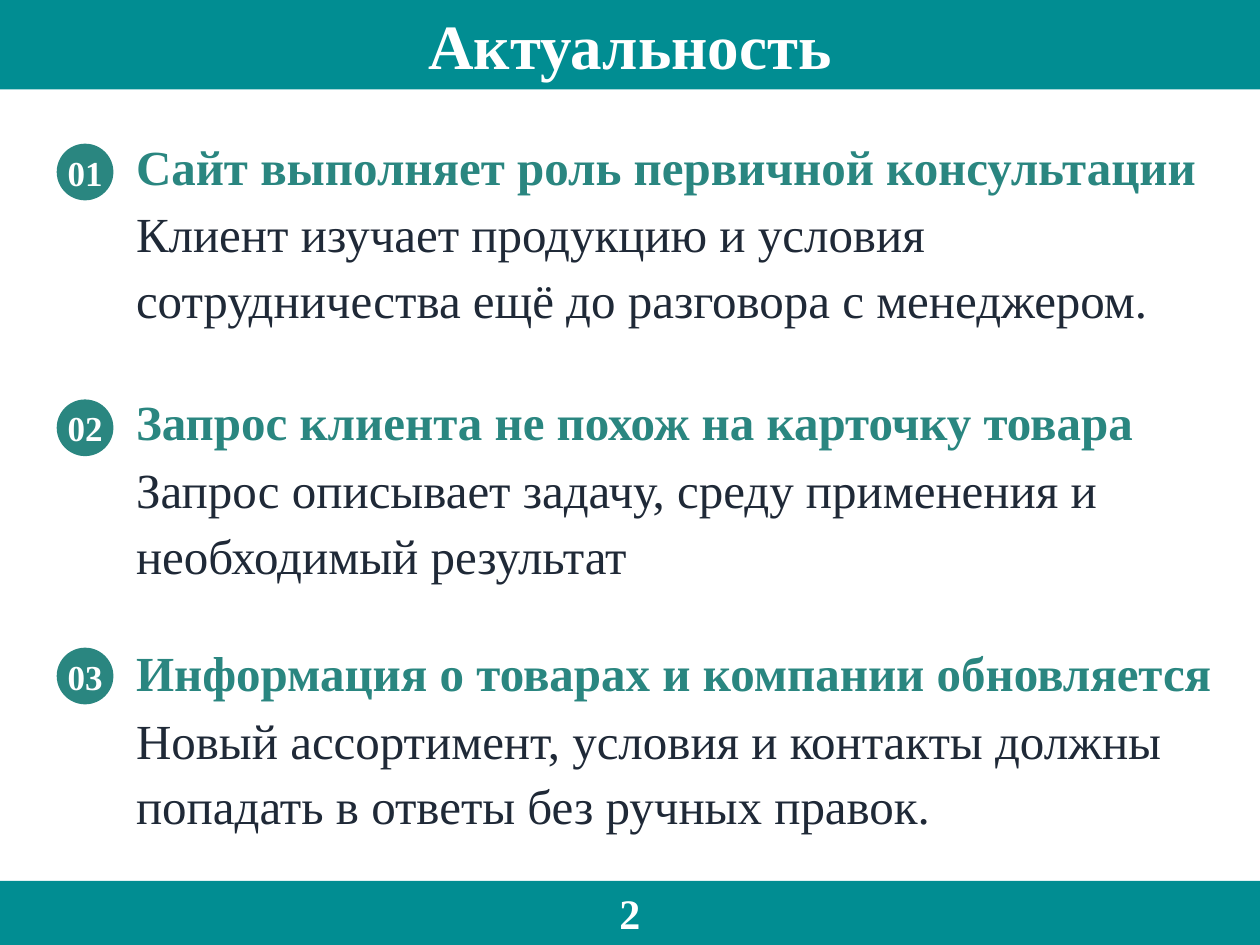
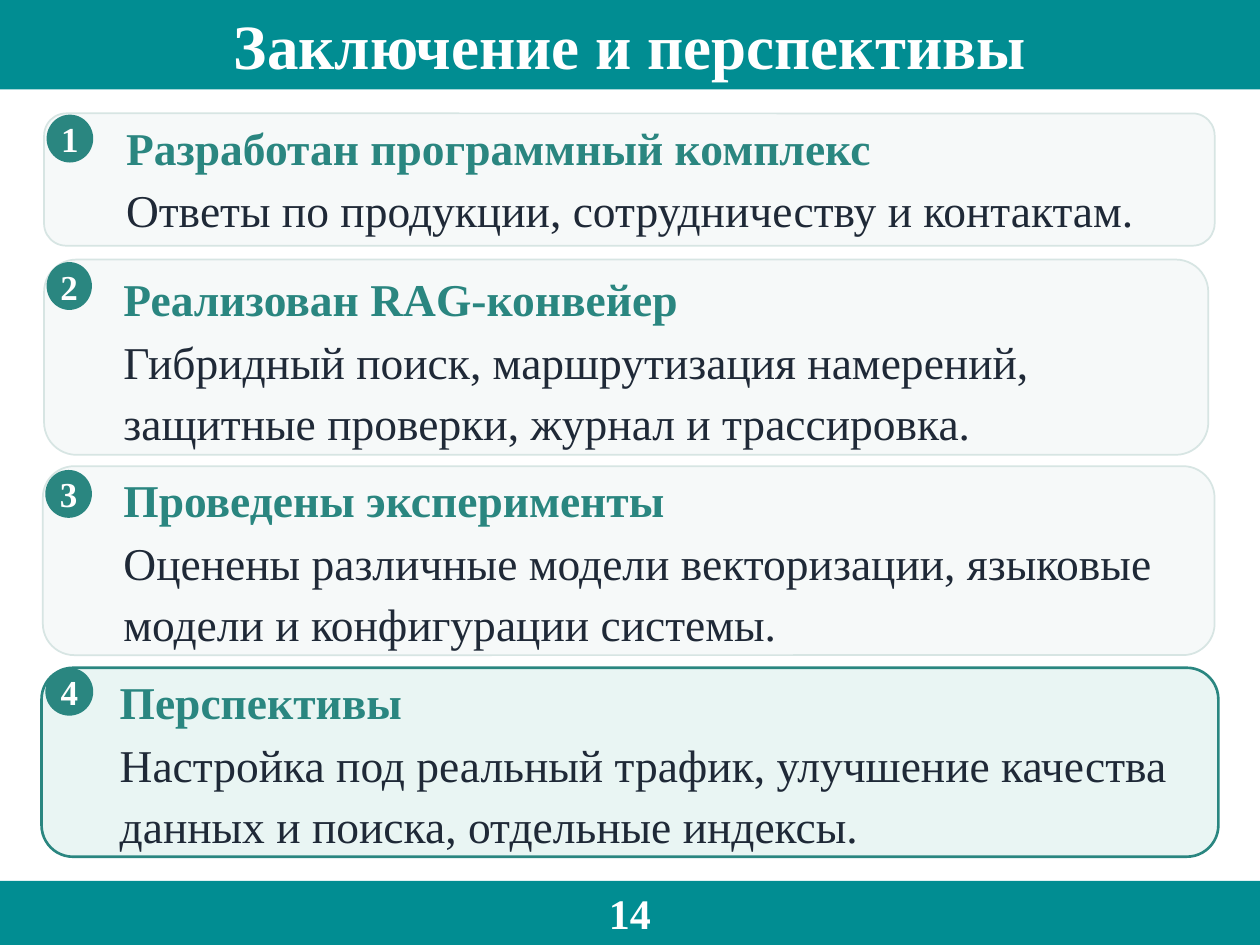
from dataclasses import dataclass
from typing import Optional

from pptx import Presentation
from pptx.dml.color import RGBColor
from pptx.enum.shapes import MSO_SHAPE as Preset
from pptx.enum.text import MSO_ANCHOR as Anchor, MSO_AUTO_SIZE as AutoSize, PP_ALIGN as Align
from pptx.util import Inches, Pt

FONT = "Times New Roman"
COLORS = {
    "band": "018D92",
    "accent": "2A8680",
    "body": "1F2937",
    "white": "FFFFFF",
    "card": "F6F9F9",
    "card_line": "D7E5E3",
    "outlook": "E9F5F3",
}
TITLE_ONLY = 5
PAGE_WIDTH, PAGE_HEIGHT = 10, 7.5
TITLE_HEIGHT, FOOTER_HEIGHT = 0.71, 0.51


@dataclass(frozen=True)
class Area:
    left: float
    top: float
    width: float
    height: float

    def lengths(self) -> tuple:
        return tuple(Inches(n) for n in (self.left, self.top, self.width, self.height))


@dataclass(frozen=True)
class Card:
    area: Area
    fill: str = "card"
    line: str = "card_line"
    weight: float = 1


@dataclass(frozen=True)
class Point:
    label: str
    heading: str
    body: str
    badge: Area
    text: Area
    card: Optional[Card] = None


# Shared drawing
def color(name: str) -> RGBColor:
    return RGBColor.from_string(COLORS[name])


def add_span(para, text: str, size: float, ink: str, bold: bool) -> None:
    span = para.add_run()
    span.text = text
    span.font.name = FONT
    span.font.size = Pt(size)
    span.font.bold = bold
    span.font.color.rgb = color(ink)


def remove_margins(frame) -> None:
    frame.margin_left = frame.margin_right = frame.margin_top = frame.margin_bottom = 0


def add_label(shape, text: str, size: float) -> None:
    frame = shape.text_frame
    frame.word_wrap = True
    frame.vertical_anchor = Anchor.MIDDLE
    para = frame.paragraphs[0]
    para.alignment = Align.CENTER
    add_span(para, text, size, "white", True)


def add_figure(page, preset, area: Area, fill: str):
    shape = page.shapes.add_shape(preset, *area.lengths())
    shape.shadow.inherit = False
    shape.fill.solid()
    shape.fill.fore_color.rgb = color(fill)
    shape.line.fill.background()
    return shape


def add_card(page, card: Card) -> None:
    shape = add_figure(page, Preset.ROUNDED_RECTANGLE, card.area, card.fill)
    shape.line.color.rgb = color(card.line)
    shape.line.width = Pt(card.weight)


def add_point(page, point: Point, size: float) -> None:
    if point.card:
        add_card(page, point.card)
    badge = add_figure(page, Preset.OVAL, point.badge, "accent")
    remove_margins(badge.text_frame)
    add_label(badge, point.label, 20)

    box = page.shapes.add_textbox(*point.text.lengths())
    frame = box.text_frame
    frame.word_wrap = True
    remove_margins(frame)
    heading = frame.paragraphs[0]
    heading.space_after = Pt(0.9)
    add_span(heading, point.heading, size, "accent", True)
    body = frame.add_paragraph()
    body.line_spacing = 1.12
    add_span(body, point.body, size, "body", False)


def add_page(deck, title: str, number: int, points: list[Point], size: float) -> None:
    page = deck.slides.add_slide(deck.slide_layouts[TITLE_ONLY])
    # Title band
    band = page.shapes.title
    band.left, band.top, band.width, band.height = Area(0, 0, PAGE_WIDTH, TITLE_HEIGHT).lengths()
    band.fill.solid()
    band.fill.fore_color.rgb = color("band")
    band.text_frame.auto_size = AutoSize.NONE
    add_label(band, title, 36)
    # Numbered points
    for point in points:
        add_point(page, point, size)
    # Footer band
    area = Area(0, PAGE_HEIGHT - FOOTER_HEIGHT, PAGE_WIDTH, FOOTER_HEIGHT)
    add_label(add_figure(page, Preset.RECTANGLE, area, "band"), str(number), 24)


# Slide content
def relevance_point(number: int, heading: str, body: str, badge_top: float,
                    text_top: float, width: float) -> Point:
    return Point(f"{number:02}", heading, body, Area(0.45, badge_top, 0.45, 0.45),
                 Area(1.08, text_top, width, 1.5))


RELEVANCE = [
    relevance_point(1, "Сайт выполняет роль первичной консультации",
                    "Клиент изучает продукцию и условия сотрудничества ещё до разговора с менеджером.",
                    1.14, 1.08, 8.57),
    relevance_point(2, "Запрос клиента не похож на карточку товара",
                    "Запрос описывает задачу, среду применения и необходимый результат",
                    3.17, 3.11, 7.95),
    relevance_point(3, "Информация о товарах и компании обновляется",
                    "Новый ассортимент, условия и контакты должны попадать в ответы без ручных правок.",
                    5.14, 5.1, 8.65),
]

CONCLUSIONS = [
    Point("1", "Разработан программный комплекс",
          "Ответы по продукции, сотрудничеству и контактам.",
          Area(0.37, 0.91, 0.37, 0.38), Area(1, 0.95, 8.59, 0.9),
          Card(Area(0.35, 0.9, 9.29, 1.05))),
    Point("2", "Реализован RAG-конвейер",
          "Гибридный поиск, маршрутизация намерений, защитные проверки, журнал и трассировка.",
          Area(0.37, 2.08, 0.36, 0.38), Area(0.98, 2.15, 8.6, 1.39),
          Card(Area(0.35, 2.06, 9.24, 1.55))),
    Point("3", "Проведены эксперименты",
          "Оценены различные модели векторизации, языковые модели и конфигурации системы.",
          Area(0.36, 3.73, 0.37, 0.38), Area(0.98, 3.75, 8.57, 1.39),
          Card(Area(0.34, 3.7, 9.3, 1.5))),
    Point("4", "Перспективы",
          "Настройка под реальный трафик, улучшение качества данных и поиска, отдельные индексы.",
          Area(0.36, 5.3, 0.38, 0.38), Area(0.95, 5.35, 8.71, 1.39),
          Card(Area(0.33, 5.3, 9.34, 1.5), "outlook", "accent", 1.5)),
]


def main() -> None:
    deck = Presentation()
    deck.slide_width, deck.slide_height = Inches(PAGE_WIDTH), Inches(PAGE_HEIGHT)
    add_page(deck, "Актуальность", 2, RELEVANCE, 28)
    add_page(deck, "Заключение и перспективы", 14, CONCLUSIONS, 26)
    deck.save("out.pptx")


if __name__ == "__main__":
    main()
